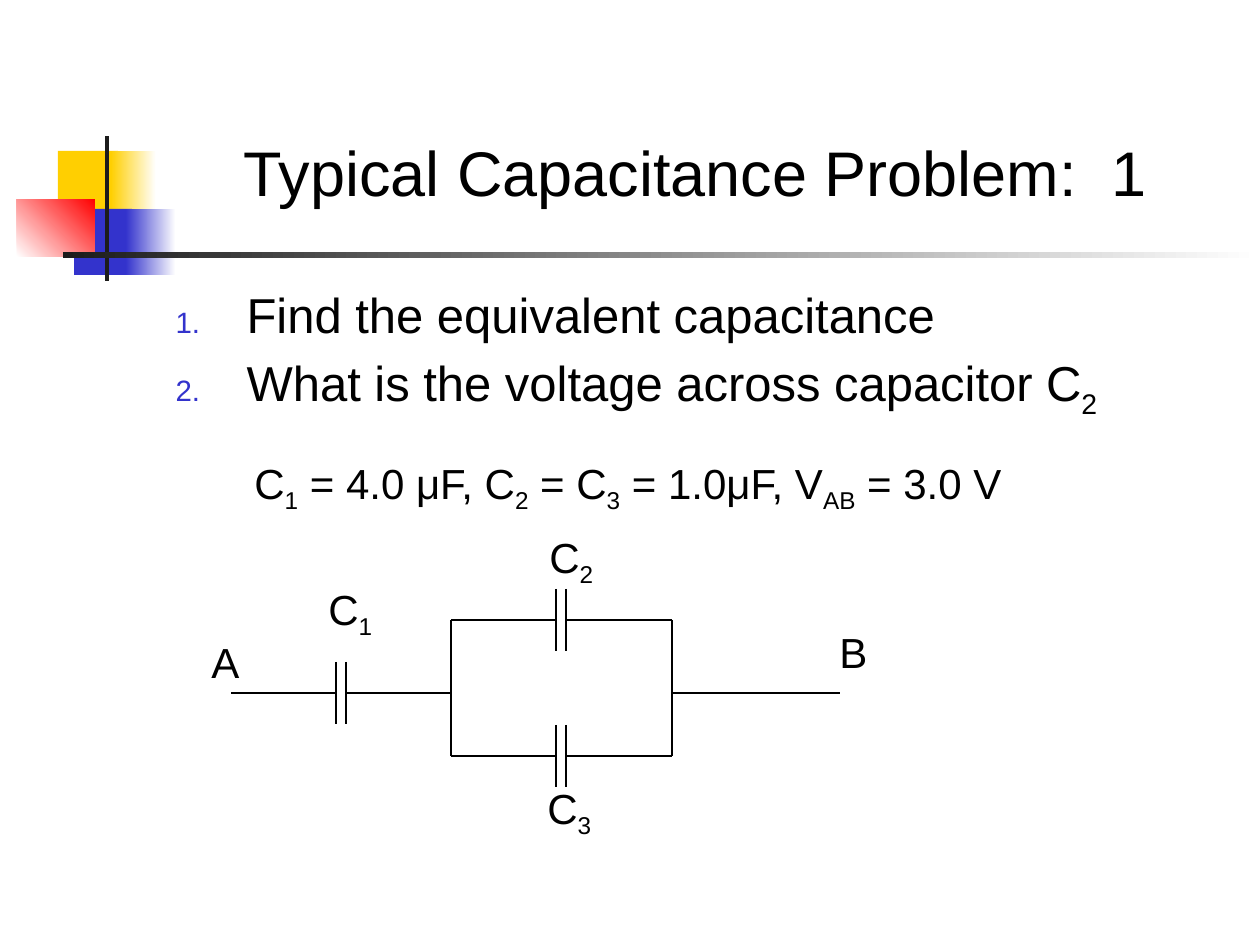
"""Build a slide posing a capacitor network problem with its circuit diagram."""
from dataclasses import dataclass

from lxml import etree
from pptx import Presentation
from pptx.dml.color import RGBColor
from pptx.enum.shapes import MSO_CONNECTOR, MSO_SHAPE
from pptx.enum.text import MSO_ANCHOR, MSO_AUTO_SIZE, PP_ALIGN
from pptx.oxml.ns import qn
from pptx.util import Emu, Pt

STRAIGHT = MSO_CONNECTOR.STRAIGHT
RECTANGLE = MSO_SHAPE.RECTANGLE
LEFT, TOP, MIDDLE = PP_ALIGN.LEFT, MSO_ANCHOR.TOP, MSO_ANCHOR.MIDDLE
FIXED = MSO_AUTO_SIZE.NONE
PX = 914400 / 126


@dataclass(frozen=True)
class Theme:
    font: str = "Arial"
    ink: str = "000000"
    paper: str = "FFFFFF"
    yellow: str = "FFCF01"
    blue: str = "3333CC"
    red: str = "FF0000"
    charcoal: str = "1C1C1C"
    title: int = 36
    body: int = 28
    label: int = 24
    wire: float = 0.75


def px(*lengths):
    return [Emu(round(length * PX)) for length in lengths]


def write(paragraph, text, size):
    paragraph.alignment = LEFT
    for index, part in enumerate(text.split("~")):
        if not part:
            continue
        run = paragraph.add_run()
        run.text = part
        for key, value in {"name": theme.font, "size": Pt(size), "bold": False}.items():
            setattr(run.font, key, value)
        run.font.color.rgb = RGBColor.from_string(theme.ink)
        if index % 2:
            run.font._element.set("baseline", "-25000")


theme = Theme()
deck = Presentation()
deck.slide_width, deck.slide_height = px(1260, 945)
slide = deck.slides.add_slide(deck.slide_layouts[1])

ornaments = [
    ((58, 151, 60, 66), [theme.yellow], 0),
    ((111, 151, 45, 66), [theme.yellow, theme.paper], 0),
    ((74, 209, 58, 66), [theme.blue], 0),
    ((126, 209, 50, 66), [theme.blue, theme.paper], 0),
    ((17, 199, 78, 58), [theme.paper, theme.red], 45),
    ((105, 136, 4, 145), [theme.charcoal], 0),
    ((63, 252, 1197, 6), [theme.charcoal, theme.paper], 0),
]
for bounds, colours, angle in ornaments:
    ornament = slide.shapes.add_shape(RECTANGLE, *px(*bounds))
    ornament.shadow.inherit = False
    ornament.line.fill.background()
    if len(colours) == 1:
        ornament.fill.solid()
        ornament.fill.fore_color.rgb = RGBColor.from_string(colours[0])
    else:
        ornament.fill.gradient()
        ornament.fill.gradient_angle = angle
        for stop, colour in zip(ornament.fill.gradient_stops, colours):
            stop.color.rgb = RGBColor.from_string(colour)

heading, questions = slide.shapes.title, slide.placeholders[1]
for holder, bounds, anchor in [
    (heading, (231, 126, 976, 90), MIDDLE),
    (questions, (163, 278, 1071, 163), TOP),
]:
    for side, length in zip(("left", "top", "width", "height"), px(*bounds)):
        setattr(holder, side, length)
    frame_format = {"word_wrap": True, "auto_size": FIXED, "vertical_anchor": anchor}
    for key, value in frame_format.items():
        setattr(holder.text_frame, key, value)

write(heading.text_frame.paragraphs[0], "Typical Capacitance Problem:  1", theme.title)

number_indent = px(71)[0]
tasks = ["Find the equivalent capacitance", "What is the voltage across capacitor C~2~"]
for index, task in enumerate(tasks):
    frame = questions.text_frame
    question = frame.add_paragraph() if index else frame.paragraphs[0]
    write(question, task, theme.body)
    properties = question._p.get_or_add_pPr()
    properties.set("marL", str(number_indent))
    properties.set("indent", str(-number_indent))
    number_colour = etree.SubElement(properties, qn("a:buClr"))
    etree.SubElement(number_colour, qn("a:srgbClr"), val=theme.blue)
    etree.SubElement(properties, qn("a:buSzPct"), val="60000")
    etree.SubElement(properties, qn("a:buFont"), typeface=theme.font)
    etree.SubElement(properties, qn("a:buAutoNum"), type="arabicPeriod")

terminal_a, split, join, terminal_b = 231, 451, 672, 840
upper, middle, lower = 620, 693, 756
half_gap, half_plate = 5, 31
wires = [
    (split, upper, split, lower),
    (join, upper, join, lower),
    (join, middle, terminal_b, middle),
]
for start, end, level in [
    (terminal_a, split, middle),
    (split, join, upper),
    (split, join, lower),
]:
    centre = (start + end) // 2
    for plate, wire_end in [(centre - half_gap, start), (centre + half_gap, end)]:
        wires.append((plate, level - half_plate, plate, level + half_plate))
        wires.append((plate, level, wire_end, level))

circuit = slide.shapes.add_group_shape()
for ends in wires:
    wire = circuit.shapes.add_connector(STRAIGHT, *px(*ends))
    wire.line.color.rgb = RGBColor.from_string(theme.ink)
    wire.line.width = Pt(theme.wire)
    etree.SubElement(wire._element.spPr, qn("a:effectLst"))

givens = "C~1~ = 4.0 μF, C~2~ = C~3~ = 1.0μF, V~AB~ = 3.0 V"
for owner, text, bounds in [
    (circuit, "C~1~", (316, 577, 72, 63)),
    (circuit, "C~2~", (537, 525, 72, 63)),
    (circuit, "C~3~", (535, 776, 72, 63)),
    (circuit, "A", (199, 630, 55, 63)),
    (circuit, "B", (827, 620, 54, 63)),
    (slide, givens, (242, 451, 801, 64)),
]:
    label = owner.shapes.add_textbox(*px(*bounds))
    label.text_frame.word_wrap = False
    write(label.text_frame.paragraphs[0], text, theme.label)

deck.save("out.pptx")
